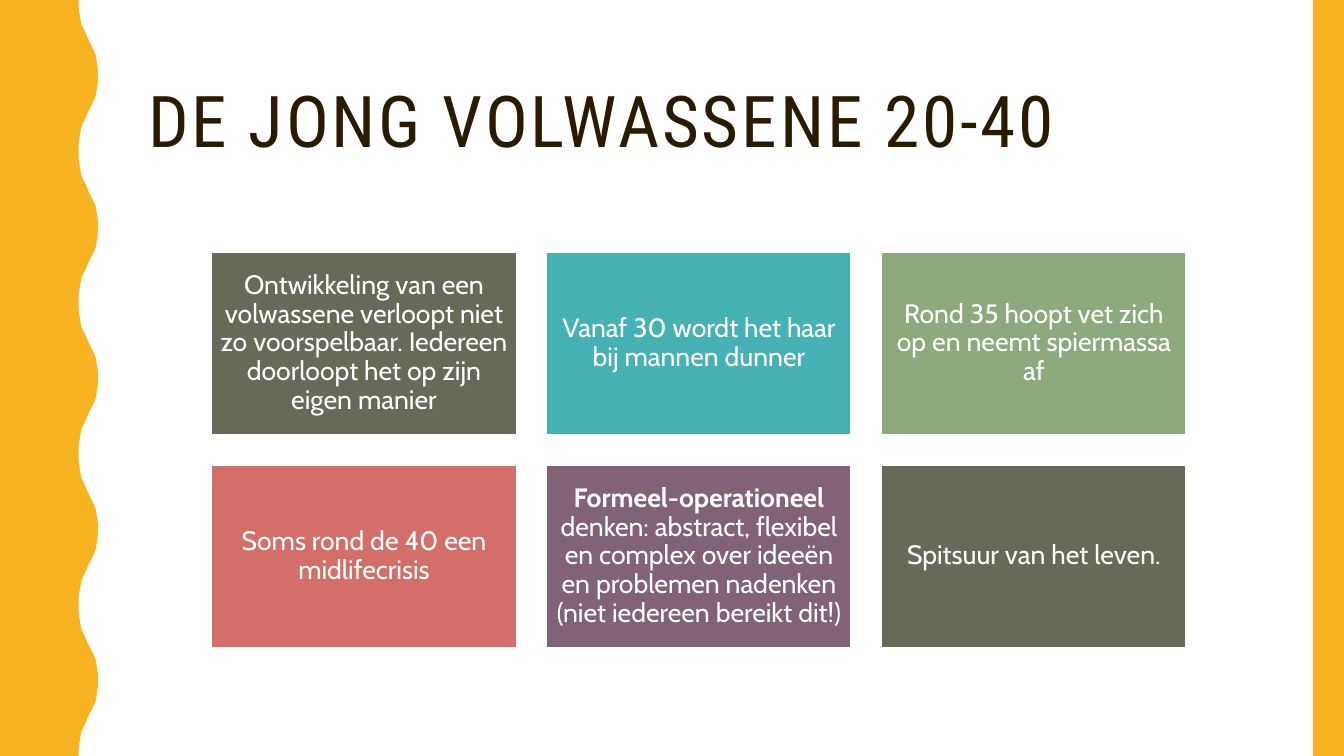
import dataclasses

import pptx
import pptx.dml.color
import pptx.enum.shapes
import pptx.enum.text
import pptx.util


@dataclasses.dataclass(frozen=True)
class Theme:
    paper: str = "FFFFFF"
    ink: str = "2A1A00"
    yellow: str = "F8B323"
    olive: str = "656A59"
    teal: str = "46B2B5"
    green: str = "8CAA7E"
    coral: str = "D36F68"
    plum: str = "826276"
    title_font: str = "Roboto Condensed"
    body_font: str = "Cabin"
    title_size: float = 51
    body_size: float = 19


THEME = Theme()
WIDTH, HEIGHT = 13.33, 7.5
COLUMNS = 3
CARD_WIDTH = 3.02
CARD_HEIGHT = CARD_WIDTH * 0.6
GAP = CARD_WIDTH * 0.1
GRID_LEFT, GRID_TOP = 2.1, 2.5
WAVES = 5
HALF_WAVE = [
    (0.78, 0), (0.78, 0.07), (0.79, 0.14), (0.8, 0.2), (0.81, 0.25),
    (0.83, 0.29), (0.85, 0.33), (0.87, 0.38), (0.89, 0.42), (0.91, 0.46),
    (0.93, 0.5), (0.95, 0.55), (0.96, 0.61), (0.97, 0.68), (0.97, 0.75),
]
CARDS = [
    (THEME.olive, [("Ontwikkeling van een volwassene verloopt niet zo voorspelbaar. "
                    "Iedereen doorloopt het op zijn eigen manier", False)]),
    (THEME.teal, [("Vanaf 30 wordt het haar bij mannen dunner", False)]),
    (THEME.green, [("Rond 35 hoopt vet zich op en neemt spiermassa af", False)]),
    (THEME.coral, [("Soms rond de 40 een midlifecrisis", False)]),
    (THEME.plum, [("Formeel-operationeel", True),
                  (" denken: abstract, flexibel en complex over ideeën en problemen "
                   "nadenken (niet iedereen bereikt dit!)", False)]),
    (THEME.olive, [("Spitsuur van het leven.", False)]),
]


def rgb(color):
    return pptx.dml.color.RGBColor.from_string(color)


def box(left, top, width, height):
    return [pptx.util.Inches(v) for v in (left, top, width, height)]


def paint(sp, color, line=None):
    sp.shadow.inherit = False
    sp.fill.solid()
    sp.fill.fore_color.rgb = rgb(color)
    if line:
        sp.line.color.rgb = rgb(line)
        sp.line.width = pptx.util.Pt(1)
    else:
        sp.line.fill.background()


def add_run(p, text, font, size, color, bold=False):
    r = p.add_run()
    r.text = text
    r.font.name = font
    r.font.size = pptx.util.Pt(size)
    r.font.color.rgb = rgb(color)
    r.font.bold = bold
    return r


def add_rect(s, area, color, line=None):
    sp = s.shapes.add_shape(pptx.enum.shapes.MSO_SHAPE.RECTANGLE, *box(*area))
    paint(sp, color, line)
    return sp


def add_wavy_edge(s):
    period = HEIGHT / WAVES
    wave = HALF_WAVE + [(x, period - y) for x, y in HALF_WAVE[-2::-1]]
    edge = [(x, y + i * period) for i in range(WAVES) for x, y in wave]
    points = [(pptx.util.Inches(x), pptx.util.Inches(y)) for x, y in edge + [(0, HEIGHT)]]
    builder = s.shapes.build_freeform(0, 0)
    builder.add_line_segments(points, close=True)
    paint(builder.convert_to_shape(), THEME.yellow)


def add_title(s, text):
    tf = s.shapes.add_textbox(*box(1.37, 0.42, 11.13, 1.63)).text_frame
    tf.word_wrap = True
    tf.vertical_anchor = pptx.enum.text.MSO_ANCHOR.MIDDLE
    p = tf.paragraphs[0]
    p.line_spacing = 0.9
    r = add_run(p, text, THEME.title_font, THEME.title_size, THEME.ink)
    r.font._element.set("spc", "200")


def add_card(s, index, color, runs):
    row, column = divmod(index, COLUMNS)
    left = GRID_LEFT + column * (CARD_WIDTH + GAP)
    top = GRID_TOP + row * (CARD_HEIGHT + GAP)
    sp = add_rect(s, (left, top, CARD_WIDTH, CARD_HEIGHT), color, THEME.paper)
    tf = sp.text_frame
    tf.word_wrap = True
    tf.vertical_anchor = pptx.enum.text.MSO_ANCHOR.MIDDLE
    tf.margin_left = tf.margin_right = pptx.util.Inches(0.08)
    tf.margin_top = tf.margin_bottom = pptx.util.Inches(0.08)
    p = tf.paragraphs[0]
    p.alignment = pptx.enum.text.PP_ALIGN.CENTER
    p.line_spacing = 0.9
    p.space_after = pptx.util.Pt(THEME.body_size * 0.35)
    for text, bold in runs:
        add_run(p, text, THEME.body_font, THEME.body_size, THEME.paper, bold)


def main():
    prs = pptx.Presentation()
    prs.slide_width = pptx.util.Inches(WIDTH)
    prs.slide_height = pptx.util.Inches(HEIGHT)
    s = prs.slides.add_slide(prs.slide_layouts[6])
    s.background.fill.solid()
    s.background.fill.fore_color.rgb = rgb(THEME.paper)
    add_title(s, "DE JONG VOLWASSENE 20-40")
    add_wavy_edge(s)
    add_rect(s, (13.02, 0, WIDTH - 13.02, HEIGHT), THEME.yellow)
    for index, (color, runs) in enumerate(CARDS):
        add_card(s, index, color, runs)
    prs.save("out.pptx")


if __name__ == "__main__":
    main()
